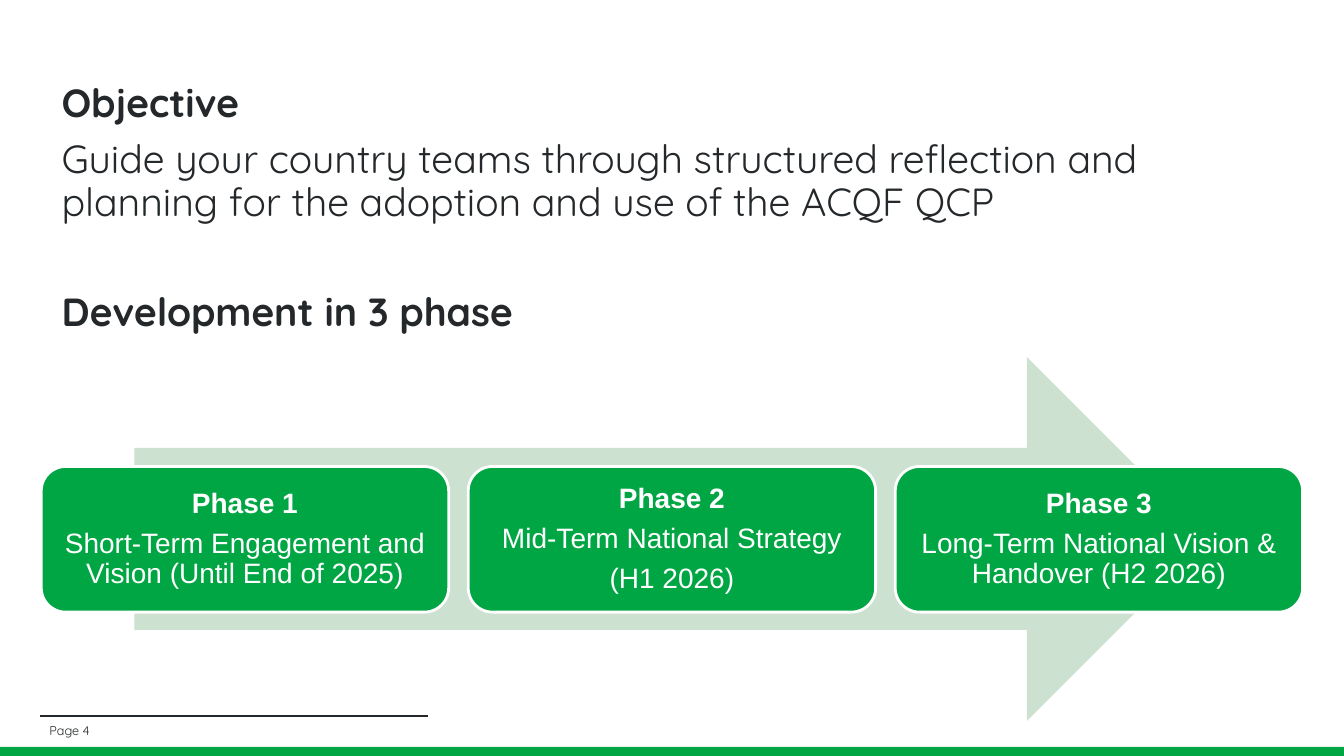
from lxml import etree
from pptx import Presentation
from pptx.dml.color import RGBColor
from pptx.enum import shapes, text
from pptx.oxml import ns
from pptx.util import Pt

GREEN, PALE, INK, WHITE = "00A643", "CCE1CF", "24282A", "FFFFFF"


def color(value):
    return RGBColor.from_string(value)


def write(frame, lines, size, font, ink, bold_lines=(), align=text.PP_ALIGN.LEFT,
          anchor=text.MSO_ANCHOR.TOP, spacing=1, before=(), after=0, indent=0,
          margins=(7.2, 3.6)):
    frame.word_wrap = True
    frame.vertical_anchor = anchor
    frame.margin_left = frame.margin_right = Pt(margins[0])
    frame.margin_top = frame.margin_bottom = Pt(margins[1])
    for index, line in enumerate(lines):
        para = frame.paragraphs[0] if index == 0 else frame.add_paragraph()
        para.alignment = align
        para.line_spacing = spacing
        para.space_after = Pt(after)
        if index and before:
            para.space_before = Pt(before[index - 1])
        if indent:
            para._p.get_or_add_pPr().set("marL", str(Pt(indent)))
        span = para.add_run()
        span.text = line
        span.font.name = font
        span.font.size = Pt(size)
        span.font.bold = index in bold_lines
        span.font.color.rgb = color(ink)


deck = Presentation()
deck.slide_width, deck.slide_height = Pt(960), Pt(540)
page = deck.slides.add_slide(deck.slide_layouts[6])

footer_bar = page.shapes.add_shape(
    shapes.MSO_SHAPE.RECTANGLE, Pt(-2), Pt(533.5), Pt(964), Pt(9.5))
footer_bar.shadow.inherit = False
footer_bar.fill.solid()
footer_bar.fill.fore_color.rgb = color(GREEN)
footer_bar.line.fill.background()

footer_rule = page.shapes.add_connector(
    shapes.MSO_CONNECTOR.STRAIGHT, Pt(28.3), Pt(511.6), Pt(305.5), Pt(511.6))
footer_rule.line.color.rgb = color(INK)
footer_rule.line.width = Pt(1.5)
etree.SubElement(footer_rule._element.spPr, ns.qn("a:effectLst"))

body = page.shapes.add_textbox(Pt(28.3), Pt(56.2), Pt(903.5), Pt(422.5))
write(body.text_frame,
      ["Objective",
       "Guide your country teams through structured reflection and planning "
       "for the adoption and use of the ACQF QCP",
       "Development in 3 phase"],
      size=28, font="Quicksand", ink=INK, bold_lines=(0, 2), spacing=0.9,
      before=(10, 48.5), indent=8.6)

page_number = page.shapes.add_textbox(Pt(28.3), Pt(514.8), Pt(292.3), Pt(13.7))
write(page_number.text_frame, ["Page 4"], size=9, font="Quicksand", ink=INK,
      anchor=text.MSO_ANCHOR.MIDDLE)

arrow = page.shapes.add_shape(
    shapes.MSO_SHAPE.RIGHT_ARROW, Pt(96), Pt(255), Pt(767.5), Pt(260))
arrow.shadow.inherit = False
arrow.fill.solid()
arrow.fill.fore_color.rgb = color(PALE)
arrow.line.fill.background()

phases = [
    ["Phase 1", "Short-Term Engagement and Vision (Until End of 2025)"],
    ["Phase 2", "Mid-Term National Strategy", "(H1 2026)"],
    ["Phase 3", "Long-Term National Vision & Handover (H2 2026)"],
]
for index, lines in enumerate(phases):
    box = page.shapes.add_shape(
        shapes.MSO_SHAPE.ROUNDED_RECTANGLE,
        Pt(29.5 + index * 305), Pt(333.2), Pt(291), Pt(104))
    box.shadow.inherit = False
    box.fill.solid()
    box.fill.fore_color.rgb = color(GREEN)
    box.line.color.rgb = color(WHITE)
    box.line.width = Pt(2)
    write(box.text_frame, lines, size=20, font="Arial", ink=WHITE, bold_lines=(0,),
          align=text.PP_ALIGN.CENTER, anchor=text.MSO_ANCHOR.MIDDLE,
          spacing=0.9, after=7, margins=(6, 6))

deck.save("out.pptx")
